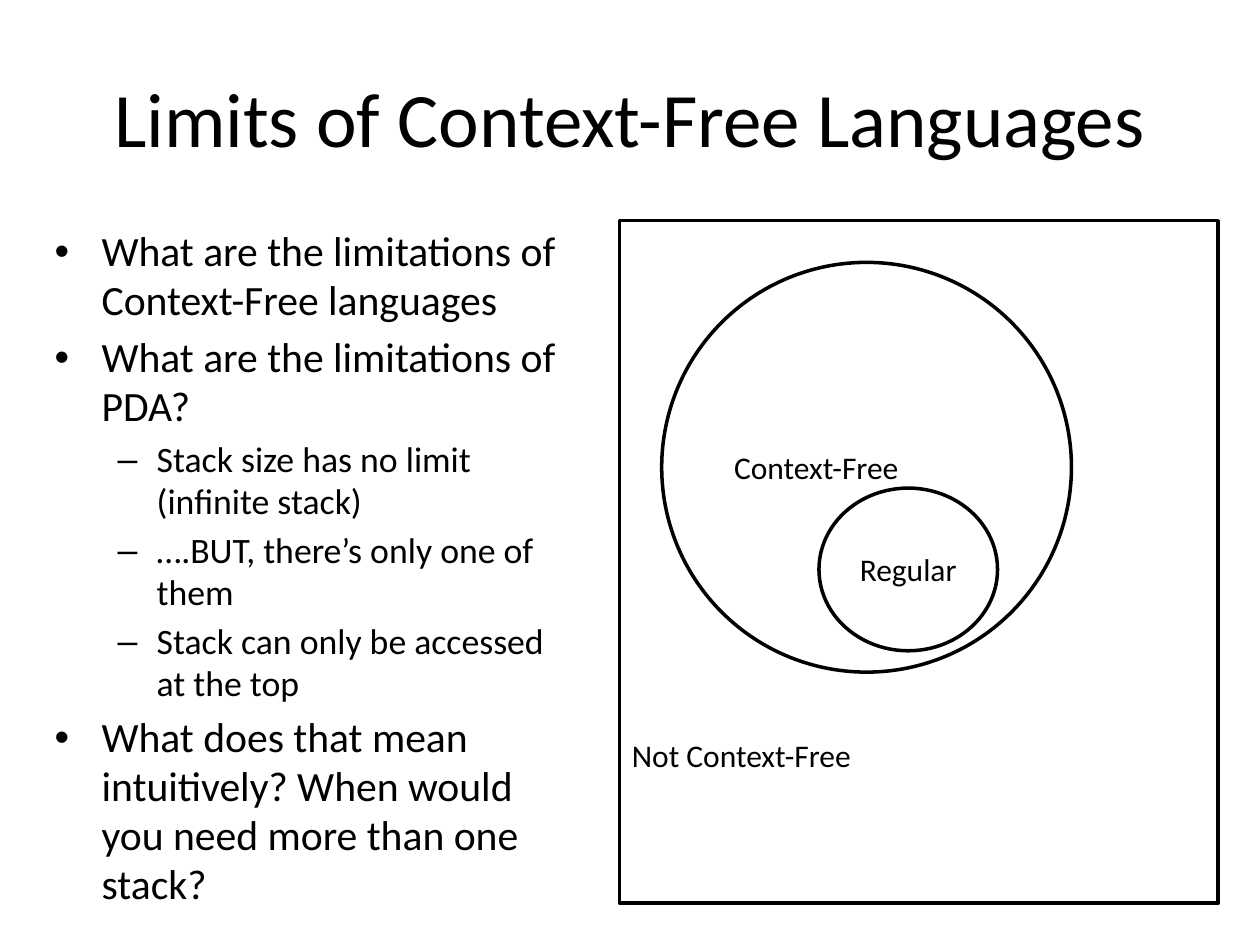
import pptx
import pptx.util
import pptx.dml.color
import pptx.enum.shapes
import pptx.enum.text
import pptx.oxml.ns
import lxml.etree

Cm = pptx.util.Cm
Pt = pptx.util.Pt
SHAPE = pptx.enum.shapes.MSO_SHAPE
ALIGN = pptx.enum.text.PP_ALIGN
ANCHOR = pptx.enum.text.MSO_ANCHOR

BLACK, WHITE = "000000", "FFFFFF"
TITLE = "Limits of Context-Free Languages"
POINTS = [
    (0, "What are the limitations of Context-Free languages"),
    (0, "What are the limitations of PDA?"),
    (1, "Stack size has no limit (infinite stack)"),
    (1, "….BUT, there’s only one of them"),
    (1, "Stack can only be accessed at the top"),
    (0, "What does that mean intuitively? When would you need more than one stack?"),
]
LEVELS = [
    dict(bullet="•", size=23.8, indent=0.95, hanging=0.95),
    dict(bullet="–", size=20.4, indent=2.06, hanging=0.79),
]
LANGUAGE_SETS = [
    dict(text="Regular", kind=SHAPE.OVAL, place=(16.51, 9.84, 3.6, 3.28),
         fill=WHITE, align=ALIGN.CENTER),
    dict(text="Context-Free", kind=SHAPE.OVAL, place=(13.34, 5.29, 8.26, 8.26)),
    dict(text="Not Context-Free", kind=SHAPE.RECTANGLE, place=(12.49, 4.45, 12.07, 13.76),
         anchor=ANCHOR.BOTTOM, bottom=2.62),
]


def color(value):
    return pptx.dml.color.RGBColor.from_string(value)


def write(para, text, size=18, align=ALIGN.LEFT, bullet=None, indent=0, hanging=0):
    para.alignment = align
    span = para.add_run()
    span.text = text
    span.font.name = "Calibri"
    span.font.size = Pt(size)
    span.font.color.rgb = color(BLACK)
    if bullet:
        para.space_before = Pt(size * 0.2)
        para.line_spacing = 0.98
        properties = para._p.get_or_add_pPr()
        properties.set("marL", str(Cm(indent)))
        properties.set("indent", str(-Cm(hanging)))
        qn = pptx.oxml.ns.qn
        lxml.etree.SubElement(properties, qn("a:buFont")).set("typeface", "Arial")
        lxml.etree.SubElement(properties, qn("a:buChar")).set("char", bullet)


def add_box(page, place, anchor=ANCHOR.TOP):
    box = page.shapes.add_textbox(*map(Cm, place))
    box.text_frame.word_wrap = True
    box.text_frame.vertical_anchor = anchor
    return box.text_frame


def add_language_set(page, text, kind, place, fill=None, align=ALIGN.LEFT,
                     anchor=ANCHOR.MIDDLE, bottom=0.13):
    shape = page.shapes.add_shape(kind, *map(Cm, place))
    shape.shadow.inherit = False
    if fill:
        shape.fill.solid()
        shape.fill.fore_color.rgb = color(fill)
    else:
        shape.fill.background()
    shape.line.color.rgb = color(BLACK)
    shape.line.width = Pt(2)
    frame = shape.text_frame
    frame.word_wrap = True
    frame.vertical_anchor = anchor
    frame.margin_bottom = Cm(bottom)
    write(frame.paragraphs[0], text, align=align)


def main():
    deck = pptx.Presentation()
    deck.slide_width, deck.slide_height = Cm(25.4), Cm(19.05)
    page = deck.slides.add_slide(deck.slide_layouts[6])

    title = add_box(page, (1.27, 0.76, 22.86, 3.18), ANCHOR.MIDDLE)
    write(title.paragraphs[0], TITLE, size=44, align=ALIGN.CENTER)

    body = add_box(page, (0.85, 4.45, 11, 13.55))
    for number, (level, text) in enumerate(POINTS):
        para = body.add_paragraph() if number else body.paragraphs[0]
        para.level = level
        write(para, text, **LEVELS[level])

    for language_set in LANGUAGE_SETS:
        add_language_set(page, **language_set)
    deck.save("out.pptx")


if __name__ == "__main__":
    main()
